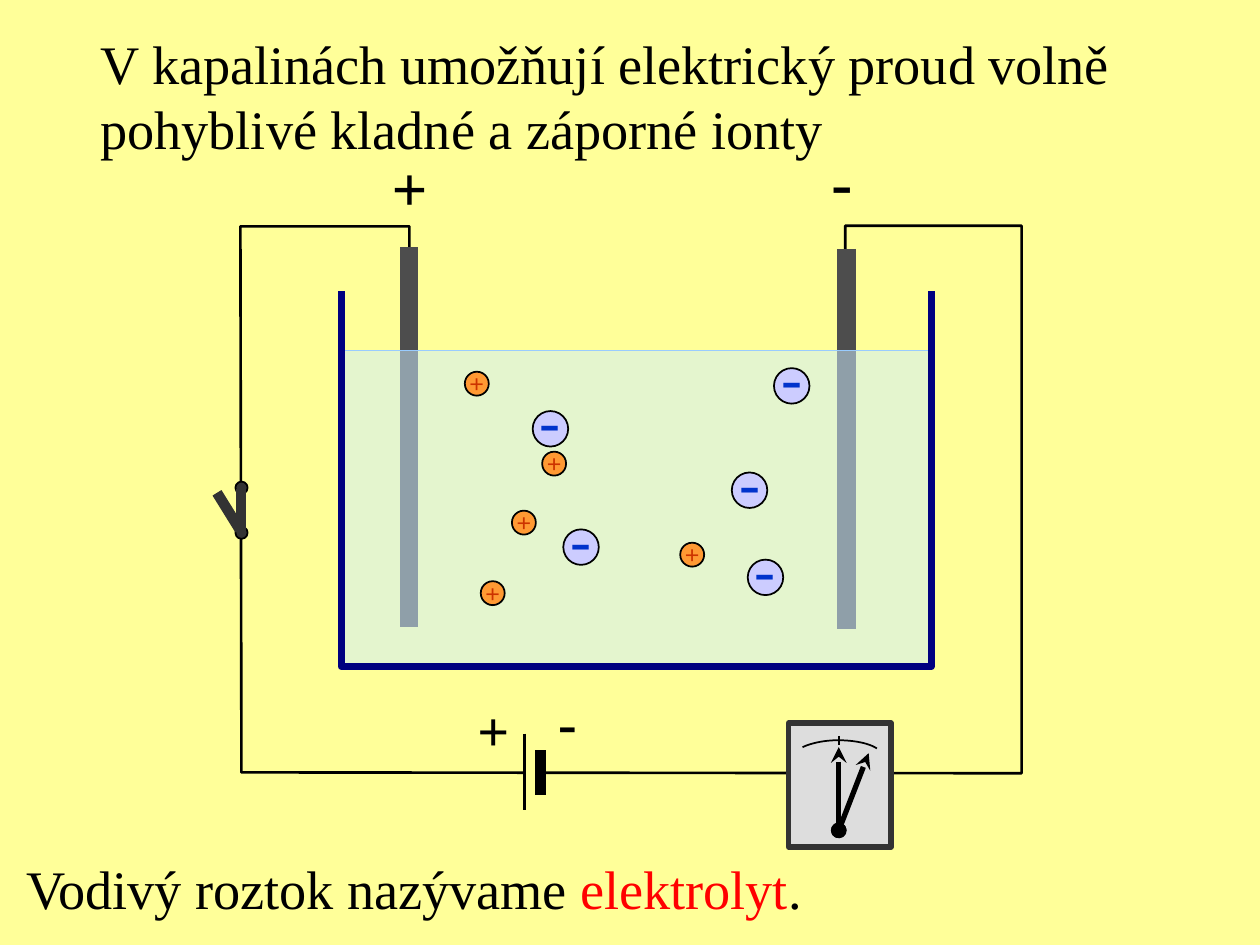
from lxml import etree
from pptx import Presentation
from pptx.dml.color import RGBColor
from pptx.enum.shapes import MSO_CONNECTOR, MSO_SHAPE
from pptx.enum.text import MSO_ANCHOR, MSO_AUTO_SIZE, PP_ALIGN
from pptx.oxml.ns import qn
from pptx.util import Pt

RECT, OVAL = MSO_SHAPE.RECTANGLE, MSO_SHAPE.OVAL
STRAIGHT = MSO_CONNECTOR.STRAIGHT
CENTER, MIDDLE = PP_ALIGN.CENTER, MSO_ANCHOR.MIDDLE
GROW = MSO_AUTO_SIZE.SHAPE_TO_FIT_TEXT

BLACK = RGBColor(0x00, 0x00, 0x00)
RED = RGBColor(0xFF, 0x00, 0x00)
YELLOW = RGBColor(0xFF, 0xFF, 0x99)
NAVY = RGBColor(0x00, 0x00, 0x80)
ELECTRODE = RGBColor(0x4D, 0x4D, 0x4D)
DARK = RGBColor(0x33, 0x33, 0x33)
METER = RGBColor(0xDD, 0xDD, 0xDD)
LIQUID = RGBColor(0xCC, 0xEC, 0xFF)
SURFACE = RGBColor(0x99, 0xCC, 0xFF)
ORANGE = RGBColor(0xFF, 0x99, 0x33)
RUST = RGBColor(0xCC, 0x33, 0x00)
LILAC = RGBColor(0xCC, 0xCC, 0xFF)
BLUE = RGBColor(0x00, 0x33, 0xCC)

SERIF, SANS = "Times New Roman", "Montserrat"


def add_run(p, text, size=31, color=BLACK, font=SERIF, bold=False):
    r = p.add_run()
    r.text = text
    r.font.size = Pt(size)
    r.font.name = font
    r.font.bold = bold
    r.font.color.rgb = color


def bezier(p0, p1, p2, p3, steps=12):
    """Points along a cubic curve, end points included."""
    points = []
    for i in range(steps + 1):
        t = i / steps
        weights = ((1 - t) ** 3, 3 * t * (1 - t) ** 2, 3 * t * t * (1 - t), t ** 3)
        points.append(tuple(sum(w * p[k] for w, p in zip(weights, (p0, p1, p2, p3)))
                            for k in (0, 1)))
    return points


class Drawing:
    def __init__(self, slide):
        self.slide = slide
        self.shapes = slide.shapes

    def shape(self, kind, x, y, w, h, fill, line=None, width=1, alpha=None):
        sp = self.shapes.add_shape(kind, Pt(x), Pt(y), Pt(w), Pt(h))
        sp.shadow.inherit = False
        sp.fill.solid()
        sp.fill.fore_color.rgb = fill
        if alpha is not None:
            clr = sp.fill._xPr.find(qn("a:solidFill"))[0]
            etree.SubElement(clr, qn("a:alpha")).set("val", str(alpha * 1000))
        if line is None:
            sp.line.fill.background()
        else:
            sp.line.color.rgb = line
            sp.line.width = Pt(width)
        return sp

    def line(self, start, end, color=BLACK, width=1.0, head=None, tail=None):
        cx = self.shapes.add_connector(STRAIGHT, *map(Pt, start + end))
        cx.line.color.rgb = color
        cx.line.width = Pt(width)
        ln = cx.line._get_or_add_ln()
        for tag, kind in (("a:headEnd", head), ("a:tailEnd", tail)):
            if kind:
                etree.SubElement(ln, qn(tag)).set("type", kind)
        etree.SubElement(cx._element.spPr, qn("a:effectLst"))

    def polyline(self, points, color=BLACK, width=1.0):
        points = [(Pt(x), Pt(y)) for x, y in points]
        fb = self.shapes.build_freeform(*points[0])
        fb.add_line_segments(points[1:], close=False)
        sp = fb.convert_to_shape()
        sp.shadow.inherit = False
        sp.fill.background()
        sp.line.color.rgb = color
        sp.line.width = Pt(width)

    def text(self, x, y, w, h, *parts, wrap=False):
        tf = self.shapes.add_textbox(Pt(x), Pt(y), Pt(w), Pt(h)).text_frame
        tf.word_wrap = wrap
        tf.auto_size = GROW
        for text, style in parts:
            add_run(tf.paragraphs[0], text, **style)

    def ion(self, x, y, d, fill, sign, bottom=3.6, **style):
        sp = self.shape(OVAL, x, y, d, d, fill, BLACK)
        tf = sp.text_frame
        tf.word_wrap = False
        tf.vertical_anchor = MIDDLE
        tf.margin_bottom = Pt(bottom)
        p = tf.paragraphs[0]
        p.alignment = CENTER
        add_run(p, sign, **style)


def main():
    prs = Presentation()
    prs.slide_width, prs.slide_height = Pt(720), Pt(540)
    s = prs.slides.add_slide(prs.slide_layouts[6])
    s.background.fill.solid()
    s.background.fill.fore_color.rgb = YELLOW
    d = Drawing(s)

    # Circuit wire
    d.polyline([(234, 143), (234, 129.4), (137.4, 129.4), (138, 441.4),
                (583.8, 441.9), (583.8, 129), (483, 129), (483, 142.6)], width=1.5)

    # Electrodes, liquid and vessel
    for x, top in ((233.8, 141.3), (483.8, 142.2)):
        d.line((x, top), (x, top + 217), ELECTRODE, 10.5)
    d.shape(RECT, 195, 200.2, 337.4, 180.7, LIQUID, SURFACE, 0.75, alpha=52)
    pole = dict(size=36, bold=True)
    d.text(216.7, 81.4, 35.3, 50.4, ("+", pole))
    d.text(468, 77.8, 26.6, 50.4, ("-", pole))
    d.polyline([(195, 166.6), (195, 380.9), (532.2, 380.9), (532.2, 166.6)], NAVY, 4)

    # Battery
    d.shape(RECT, 300.2, 423.4, 7.2, 35.3, YELLOW)
    d.line((299.8, 419.2), (299.8, 462.8), width=1.5)
    d.line((308.9, 428.6), (308.9, 454.3), width=6)
    pole = dict(size=32, bold=True)
    d.text(265.7, 393.8, 32.4, 45.4, ("+", pole))
    d.text(311.8, 389.5, 25.2, 45.4, ("-", pole))

    # Switch
    d.shape(RECT, 133.9, 280.8, 7.2, 20.9, YELLOW)
    for y in (275.2, 300.9):
        d.shape(OVAL, 134.5, y, 7, 7, DARK, BLACK)
    d.line((137.6, 303.8), (137.6, 279.2), DARK, 6)
    d.line((137, 302.6), (124, 281.6), DARK, 6)

    # Meter with its scale and two needle positions
    d.shape(RECT, 450.6, 413.1, 58.6, 71, METER, DARK, 3)
    left = bezier((458.6, 427), (463, 424.8), (470.9, 423), (478.8, 423))
    right = bezier((478.8, 423), (488.2, 423), (496.8, 424.8), (501.1, 427.7))
    d.polyline(left + right[1:])
    d.line((479.3, 420.5), (479.3, 425.5))
    for tip in ((479.3, 427), (496.4, 430.4)):
        d.line(tip, (479.3, 474.5), width=3, head="stealth", tail="oval")

    # Captions
    d.text(50.4, 13.7, 626.4, 82.1,
           ("V kapalinách umožňují elektrický proud volně pohyblivé kladné a záporné ionty", {}),
           wrap=True)
    d.text(7.9, 485.3, 462.2, 44.6, ("Vodivý roztok nazývame ", {}),
           ("elektrolyt", dict(color=RED)), (".", {}))

    # Ions
    for x, y in ((265.6, 212.4), (274.7, 332.1), (309.8, 258.1), (388.7, 310.1), (292.5, 291.8)):
        d.ion(x, y, 13.7, ORANGE, "+", size=16, color=RUST, font=SANS)
    for x, y in ((442.3, 210.4), (418.2, 270), (427.3, 319.8), (321.9, 302.5), (304.4, 234.9)):
        d.ion(x, y, 20.3, LILAC, "-", bottom=15.1, size=36, color=BLUE)

    prs.save("out.pptx")


if __name__ == "__main__":
    main()
